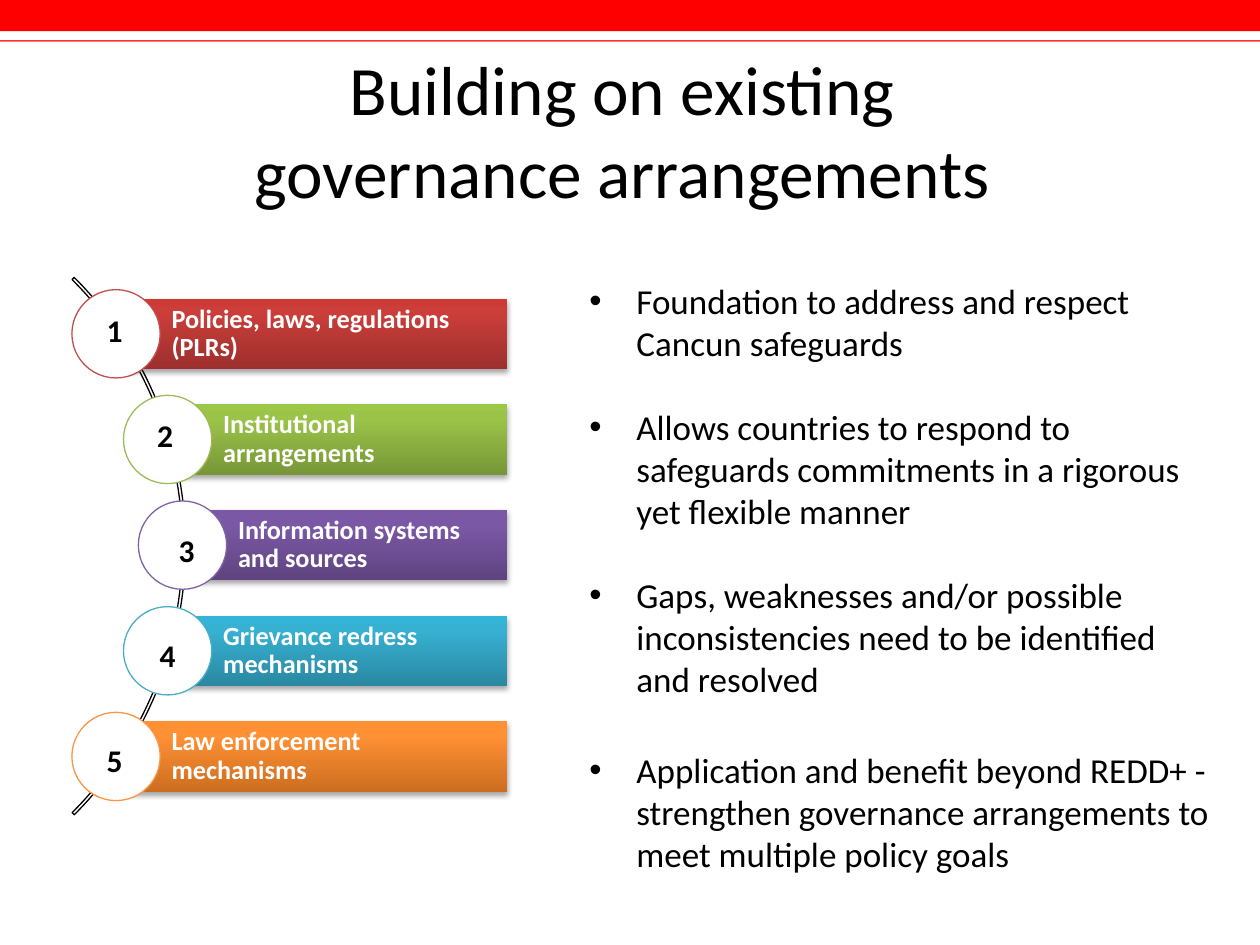
from copy import deepcopy
from dataclasses import dataclass

from lxml.etree import SubElement
from pptx import Presentation
from pptx.dml.color import RGBColor as Rgb
from pptx.enum.shapes import MSO_SHAPE as Shape
from pptx.enum.text import MSO_ANCHOR as Anchor, PP_ALIGN as Align
from pptx.oxml.ns import qn
from pptx.util import Cm, Pt


@dataclass(frozen=True)
class Theme:
    font: str = "Calibri"
    black: str = "000000"
    white: str = "FFFFFF"
    band: str = "FF0000"
    rule: str = "FF3333"
    title_size: float = 39.6
    body_size: float = 20
    number_size: float = 18
    label_size: float = 15
    outline: float = 0.75


@dataclass(frozen=True)
class Step:
    label: str
    left: float        # bar's left edge and circle's centre, in cm
    number_at: tuple   # corner of the number's box, in cm
    outline: str
    gradient: tuple    # bottom to top


THEME = Theme()

STEPS = [
    Step("Policies, laws, regulations (PLRs)", 2.34, (1.9, 6.15),
         "C0504D", ("9C2F2D", "CB3E3A", "CE3B37")),
    Step("Institutional arrangements", 3.38, (2.92, 8.26),
         "9BBB59", ("779737", "9BC348", "9DC746")),
    Step("Information systems and sources", 3.68, (3.35, 10.59),
         "8064A2", ("5F4480", "7B58A6", "7C57A8")),
    Step("Grievance redress mechanisms", 3.38, (2.97, 12.7),
         "4BACC6", ("2A88A2", "37B1D2", "34B4D6")),
    Step("Law enforcement mechanisms", 2.34, (1.9, 14.81),
         "F79646", ("CC6E20", "FF9034", "FF9136")),
]
FIRST_CENTRE, PITCH = 6.73, 2.13
BAR_RIGHT, BAR_HEIGHT, CIRCLE = 10.22, 1.42, 1.78
GRADIENT_POSITIONS = (0, 0.8, 1)

# Each point with the space before it, in points
POINTS = [
    ("Foundation to address and respect Cancun safeguards", 0),
    ("Allows countries to respond to safeguards commitments in a rigorous "
     "yet flexible manner", 24),
    ("Gaps, weaknesses and/or possible inconsistencies need to be identified "
     "and resolved", 24),
    ("Application and benefit beyond REDD+ - strengthen governance "
     "arrangements to meet multiple policy goals", 28),
]


def style(para, size, color=THEME.black, bold=False):
    for span in para.runs:
        span.font.name = THEME.font
        span.font.size = Pt(size)
        span.font.bold = bold
        span.font.color.rgb = Rgb.from_string(color)


def add_shape(page, kind, left, top, width, height, fill=None, line=None):
    shape = page.shapes.add_shape(kind, Cm(left), Cm(top), Cm(width), Cm(height))
    shape.shadow.inherit = False
    if fill:
        shape.fill.solid()
        shape.fill.fore_color.rgb = Rgb.from_string(fill)
    else:
        shape.fill.background()
    if line:
        shape.line.color.rgb = Rgb.from_string(line)
        shape.line.width = Pt(THEME.outline)
    else:
        shape.line.fill.background()
    return shape


def add_text(page, left, top, width, height, text, wrap=True):
    box = page.shapes.add_textbox(Cm(left), Cm(top), Cm(width), Cm(height))
    box.text_frame.word_wrap = wrap
    box.text_frame.text = text
    return box.text_frame


def shade(shape, colors):
    """Fill with a three-stop gradient that rises from the bottom."""
    shape.fill.gradient()
    shape.fill.gradient_angle = 90
    stop_list = shape.fill._fill._gradFill.find(qn("a:gsLst"))
    stop_list.insert(1, deepcopy(stop_list[0]))
    for stop, position, color in zip(shape.fill.gradient_stops,
                                     GRADIENT_POSITIONS, colors):
        stop.position = position
        stop.color.rgb = Rgb.from_string(color)


def drop_shadow(shape):
    effects = shape._element.spPr.find(qn("a:effectLst"))
    shadow = SubElement(effects, qn("a:outerShdw"), blurRad=str(Pt(3.1)),
                        dist=str(Pt(1.8)), dir="5400000", rotWithShape="0")
    color = SubElement(shadow, qn("a:srgbClr"), val=THEME.black)
    SubElement(color, qn("a:alpha"), val="35000")


def add_bullet(para, indent):
    props = para._p.get_or_add_pPr()
    props.set("marL", str(Cm(indent)))
    props.set("indent", str(-Cm(indent)))
    SubElement(props, qn("a:buFont"), typeface="Arial")
    SubElement(props, qn("a:buChar"), char="•")


def add_header(page):
    add_shape(page, Shape.RECTANGLE, 0, 0, 25.4, 0.63, THEME.band)
    add_shape(page, Shape.RECTANGLE, 0, 0.81, 25.4, 0.03, THEME.rule)
    frame = add_text(page, 1.27, 1.27, 22.86, 2.67,
                     "Building on existing \vgovernance arrangements ")
    frame.vertical_anchor = Anchor.MIDDLE
    para = frame.paragraphs[0]
    para.alignment = Align.CENTER
    style(para, THEME.title_size)


def add_arc(page):
    arc = add_shape(page, Shape.BLOCK_ARC, -11.58, 3.35, 15.32, 15.32,
                    line=THEME.black)
    for index, value in enumerate((189, 27, 0.004)):
        arc.adjustments[index] = value


def add_step(page, step, centre):
    bar = add_shape(page, Shape.RECTANGLE, step.left, centre - BAR_HEIGHT / 2,
                    BAR_RIGHT - step.left, BAR_HEIGHT)
    shade(bar, step.gradient)
    drop_shadow(bar)
    frame = bar.text_frame
    frame.text = step.label
    frame.word_wrap = True
    frame.vertical_anchor = Anchor.MIDDLE
    frame.margin_left = Cm(1.12)
    frame.margin_top = frame.margin_right = frame.margin_bottom = Cm(0.1)
    para = frame.paragraphs[0]
    para.alignment = Align.LEFT
    para.line_spacing = 0.9
    style(para, THEME.label_size, THEME.white, bold=True)
    add_shape(page, Shape.OVAL, step.left - CIRCLE / 2, centre - CIRCLE / 2,
              CIRCLE, CIRCLE, THEME.white, step.outline)


def add_number(page, number, corner):
    frame = add_text(page, *corner, 0.85, 1.02, str(number), wrap=False)
    style(frame.paragraphs[0], THEME.number_size, bold=True)


def add_points(page):
    frame = add_text(page, 11.63, 5.51, 13.13, 13.54,
                     "\n".join(text for text, _ in POINTS))
    for para, (_, space) in zip(frame.paragraphs, POINTS):
        add_bullet(para, 0.95)
        if space:
            para.space_before = Pt(space)
        style(para, THEME.body_size)


def main():
    deck = Presentation()
    deck.slide_width, deck.slide_height = Cm(25.4), Cm(19.05)
    page = deck.slides.add_slide(deck.slide_layouts[6])
    add_header(page)
    add_arc(page)
    for index, step in enumerate(STEPS):
        add_step(page, step, FIRST_CENTRE + index * PITCH)
    add_points(page)
    for number, step in enumerate(STEPS, 1):
        add_number(page, number, step.number_at)
    deck.save("out.pptx")


if __name__ == "__main__":
    main()
